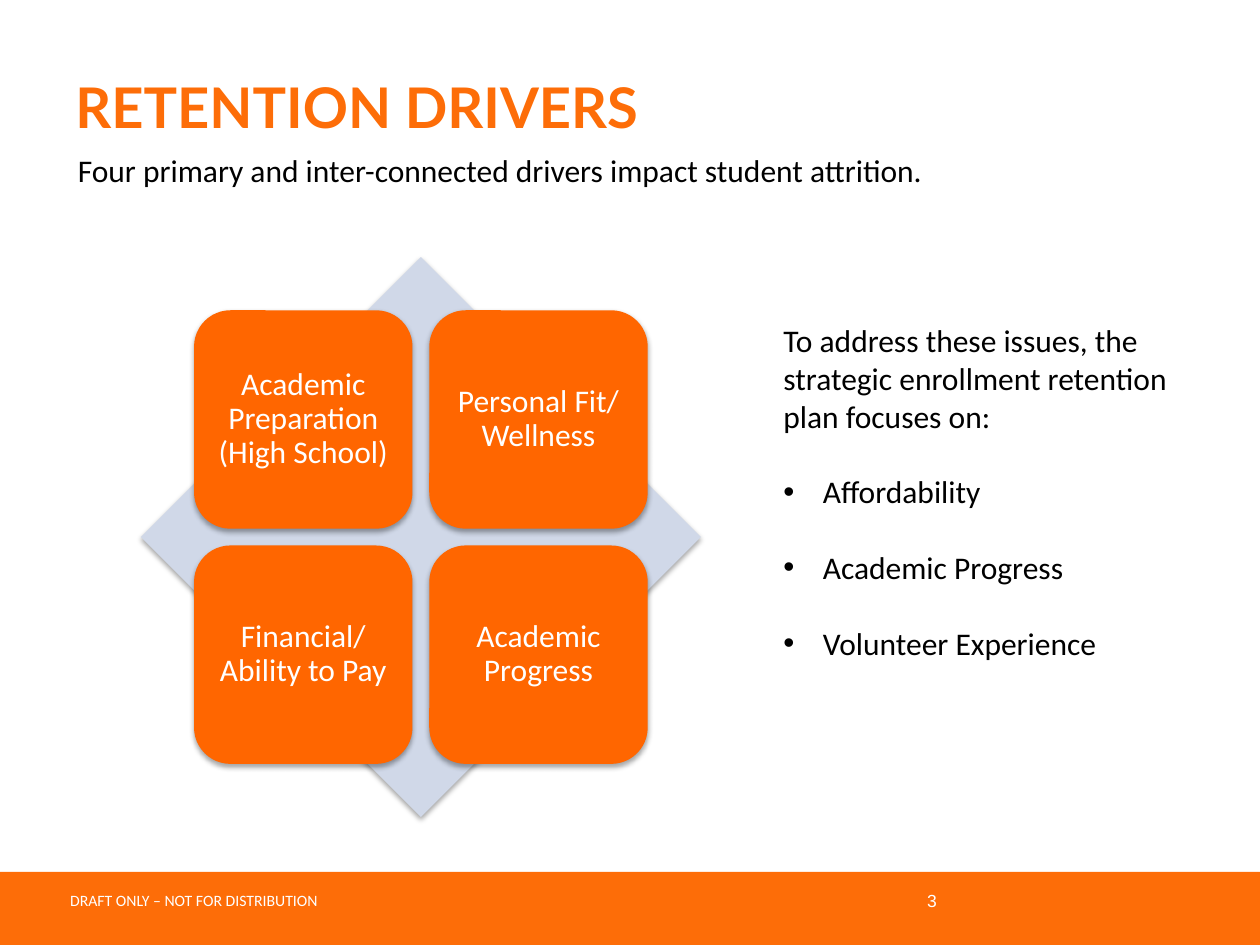
import pptx
import pptx.dml.color
import pptx.enum.shapes
import pptx.enum.text
import pptx.oxml
import pptx.oxml.ns
import pptx.util

Pt = pptx.util.Pt
RGBColor = pptx.dml.color.RGBColor
MSO_SHAPE = pptx.enum.shapes.MSO_SHAPE
PP_ALIGN = pptx.enum.text.PP_ALIGN
MSO_ANCHOR = pptx.enum.text.MSO_ANCHOR

# Content
TITLE = "RETENTION DRIVERS"
SUBTITLE = "Four primary and inter-connected drivers impact student attrition."
DRIVERS = [
    ["Academic Preparation (High School)", "Personal Fit/ Wellness"],
    ["Financial/ Ability to Pay", "Academic Progress"],
]
FOCUS_INTRO = ("To address these issues, the strategic enrollment retention "
               "plan focuses on:")
FOCUS_ITEMS = ["Affordability", "Academic Progress", "Volunteer Experience"]
FOOTER = "DRAFT ONLY – NOT FOR DISTRIBUTION"
PAGE_NUMBER = "3"

# Colours and measures in points
ORANGE = RGBColor(0xFD, 0x6D, 0x08)
TILE_ORANGE = RGBColor(0xFF, 0x66, 0x00)
PALE_BLUE = RGBColor(0xD0, 0xD8, 0xE8)
WHITE = RGBColor(0xFF, 0xFF, 0xFF)
BLACK = RGBColor(0x00, 0x00, 0x00)
SLIDE_W, SLIDE_H = 720, 540
CENTER_X, CENTER_Y = 240.5, 306.9
DIAMOND, TILE, GAP = 320, 124.8, 9.6
FOCUS_GAP, BULLET_INDENT = 21.6, 22.5

SHADOW = (
    '<a:effectLst xmlns:a="http://schemas.openxmlformats.org/drawingml/2006/main">'
    f'<a:outerShdw blurRad="{Pt(3.1)}" dist="{Pt(1.8)}" dir="5400000" rotWithShape="0">'
    '<a:srgbClr val="000000"><a:alpha val="35000"/></a:srgbClr>'
    '</a:outerShdw></a:effectLst>'
)


def add_block(slide, kind, box, fill, shadow=False):
    block = slide.shapes.add_shape(kind, *map(Pt, box))
    block.fill.solid()
    block.fill.fore_color.rgb = fill
    block.line.fill.background()
    block.shadow.inherit = False
    if shadow:
        properties = block.fill._xPr
        properties.remove(properties.find(pptx.oxml.ns.qn("a:effectLst")))
        properties.append(pptx.oxml.parse_xml(SHADOW))
    return block


def add_text_box(slide, box, anchor=MSO_ANCHOR.TOP, wrap=True):
    frame = slide.shapes.add_textbox(*map(Pt, box)).text_frame
    frame.word_wrap = wrap
    frame.vertical_anchor = anchor
    return frame


def write(paragraph, text, size, color, font="Calibri", bold=False,
          align=PP_ALIGN.LEFT):
    paragraph.alignment = align
    run = paragraph.add_run()
    run.text = text
    run.font.size = Pt(size)
    run.font.name = font
    run.font.bold = bold
    run.font.color.rgb = color


def add_bullet(paragraph):
    properties = paragraph._p.get_or_add_pPr()
    properties.set("marL", str(Pt(BULLET_INDENT)))
    properties.set("indent", str(-Pt(BULLET_INDENT)))
    for tag, name, value in (("a:buFont", "typeface", "Arial"),
                             ("a:buChar", "char", "•")):
        bullet = pptx.oxml.parse_xml(
            f'<{tag} {pptx.oxml.ns.nsdecls("a")} {name}="{value}"/>')
        properties.append(bullet)


def add_driver_matrix(slide):
    add_block(slide, MSO_SHAPE.DIAMOND,
              (CENTER_X - DIAMOND / 2, CENTER_Y - DIAMOND / 2, DIAMOND, DIAMOND),
              PALE_BLUE, shadow=True)
    left, top = CENTER_X - TILE - GAP / 2, CENTER_Y - TILE - GAP / 2
    for row, names in enumerate(DRIVERS):
        for column, name in enumerate(names):
            tile = add_block(
                slide, MSO_SHAPE.ROUNDED_RECTANGLE,
                (left + column * (TILE + GAP), top + row * (TILE + GAP), TILE, TILE),
                TILE_ORANGE, shadow=True)
            frame = tile.text_frame
            frame.word_wrap = True
            frame.vertical_anchor = MSO_ANCHOR.MIDDLE
            frame.margin_left = frame.margin_right = Pt(5)
            frame.margin_top = frame.margin_bottom = Pt(5)
            frame.paragraphs[0].line_spacing = 0.9
            write(frame.paragraphs[0], name, 18, WHITE, align=PP_ALIGN.CENTER)


def add_focus_list(slide):
    frame = add_text_box(slide, (440.6, 180, 243.4, 203.8))
    write(frame.paragraphs[0], FOCUS_INTRO, 18, BLACK)
    for item in FOCUS_ITEMS:
        paragraph = frame.add_paragraph()
        paragraph.space_before = Pt(FOCUS_GAP)
        add_bullet(paragraph)
        write(paragraph, item, 18, BLACK)


def main():
    deck = pptx.Presentation()
    deck.slide_width, deck.slide_height = Pt(SLIDE_W), Pt(SLIDE_H)
    slide = deck.slides.add_slide(deck.slide_layouts[6])

    # Footer band
    add_block(slide, MSO_SHAPE.RECTANGLE, (0, 498.2, SLIDE_W, 41.8), ORANGE)
    footer = add_text_box(slide, (33, 505.6, 158.4, 18), wrap=False)
    write(footer.paragraphs[0], FOOTER, 9, WHITE)
    number = add_text_box(slide, (374.4, 500.4, 168, 28.8), MSO_ANCHOR.MIDDLE)
    write(number.paragraphs[0], PAGE_NUMBER, 10, WHITE, "Arial",
          align=PP_ALIGN.RIGHT)

    # Heading
    title = add_text_box(slide, (36, 15.8, 648, 90), MSO_ANCHOR.MIDDLE)
    write(title.paragraphs[0], TITLE, 32, ORANGE, "Lato", bold=True)

    add_driver_matrix(slide)

    # Subtitle on its white strip
    strip = add_block(slide, MSO_SHAPE.RECTANGLE, (37.4, 82.8, 663.8, 29), WHITE)
    strip.text_frame.word_wrap = True
    strip.text_frame.vertical_anchor = MSO_ANCHOR.TOP
    write(strip.text_frame.paragraphs[0], SUBTITLE, 18, BLACK)

    add_focus_list(slide)
    deck.save("out.pptx")


if __name__ == "__main__":
    main()
